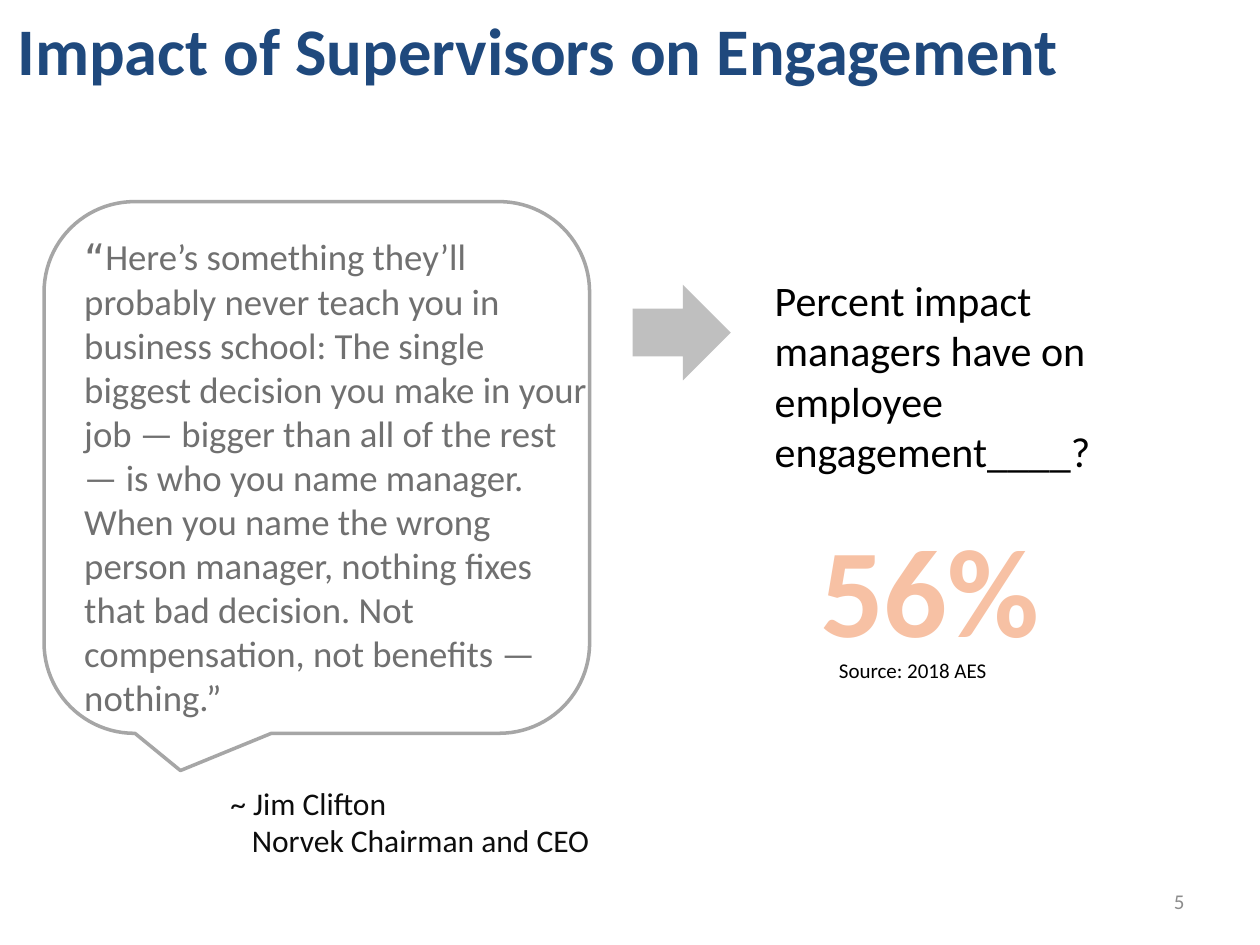
import pptx
import pptx.util
import pptx.dml.color
import pptx.enum.shapes
import pptx.enum.text

Inches = pptx.util.Inches
RGBColor = pptx.dml.color.RGBColor
SHAPE = pptx.enum.shapes.MSO_SHAPE
ALIGN = pptx.enum.text.PP_ALIGN
ANCHOR = pptx.enum.text.MSO_ANCHOR

WHITE = RGBColor(0xFF, 0xFF, 0xFF)
BLACK = RGBColor(0x00, 0x00, 0x00)
NAVY = RGBColor(0x1F, 0x49, 0x7D)
PEACH = RGBColor(0xF7, 0xC1, 0xA4)
QUOTE_GRAY = RGBColor(0x70, 0x70, 0x70)
NUMBER_GRAY = RGBColor(0x8C, 0x8C, 0x8C)
OUTLINE_GRAY = RGBColor(0xA6, 0xA6, 0xA6)
ARROW_GRAY = RGBColor(0xBF, 0xBF, 0xBF)
NEAR_BLACK = RGBColor(0x0D, 0x0D, 0x0D)


def add_run(paragraph, text, size, color=BLACK, bold=False, font="Calibri"):
    run = paragraph.add_run()
    run.text = text
    run.font.size = pptx.util.Pt(size)
    run.font.name = font
    run.font.bold = bold
    run.font.color.rgb = color


def add_text(slide, box, text, align=ALIGN.LEFT, anchor=ANCHOR.TOP,
             wrap=True, **font_format):
    shape = slide.shapes.add_textbox(*map(Inches, box))
    frame = shape.text_frame
    frame.word_wrap = wrap
    frame.vertical_anchor = anchor
    for index, line in enumerate(text.split("\n")):
        paragraph = frame.add_paragraph() if index else frame.paragraphs[0]
        paragraph.alignment = align
        add_run(paragraph, line, **font_format)
    return frame


def add_plain_shape(slide, kind, box, fill, line=None):
    shape = slide.shapes.add_shape(kind, *map(Inches, box))
    shape.shadow.inherit = False
    shape.fill.solid()
    shape.fill.fore_color.rgb = fill
    if line is None:
        shape.line.fill.background()
    else:
        shape.line.color.rgb = line
        shape.line.width = pptx.util.Pt(2)
    return shape


def add_title(slide, box):
    add_text(slide, box, "Impact of Supervisors on Engagement",
             size=38, color=NAVY, bold=True)


def add_quote(slide, box):
    left, top, width, height = box
    bubble = add_plain_shape(slide, SHAPE.ROUNDED_RECTANGULAR_CALLOUT, box,
                             WHITE, OUTLINE_GRAY)
    for index, value in enumerate((-0.25, 0.57, 0.17)):
        bubble.adjustments[index] = value

    attribution = add_text(
        slide, (left + 1.38, top + height + 0.35, 3.68, 1.01),
        "~ Jim Clifton\nNorvek Chairman and CEO", size=18, color=NEAR_BLACK)
    properties = attribution.paragraphs[1]._p.get_or_add_pPr()
    properties.set("marL", str(Inches(0.17)))

    quote = add_text(
        slide, (left + 0.22, top + 0.21, width - 0.14, height - 0.23), "“",
        size=20, color=QUOTE_GRAY, font="DejaVu Sans Mono")
    add_run(
        quote.paragraphs[0],
        "Here’s something they’ll probably never teach you in business school: "
        "The single biggest decision you make in your job — bigger than all of "
        "the rest — is who you name manager. When you name the wrong person "
        "manager, nothing fixes that bad decision. Not compensation, not "
        "benefits — nothing.”",
        size=21, color=QUOTE_GRAY)


def add_question(slide, box):
    left, top, width, height = box
    add_plain_shape(slide, SHAPE.RIGHT_ARROW, (left, top + 0.13, 0.78, 0.76),
                    ARROW_GRAY)
    add_text(slide, (left + 1.03, top, width - 1.03, height),
             "Percent impact managers have on employee engagement____?",
             size=24)


def add_answer(slide, box):
    left, top, width, height = box
    add_text(slide, (left, top, width, height - 0.15), "56%",
             align=ALIGN.CENTER, wrap=False, size=72, color=PEACH, bold=True)
    add_text(slide, (left + 0.16, top + height - 0.3, width - 0.16, 0.3),
             "Source: 2018 AES", size=12)


def add_slide_number(slide, box):
    add_text(slide, box, "5", align=ALIGN.RIGHT, anchor=ANCHOR.MIDDLE,
             size=12, color=NUMBER_GRAY)


def main():
    presentation = pptx.Presentation()
    presentation.slide_width = Inches(10)
    presentation.slide_height = Inches(7.5)
    slide = presentation.slides.add_slide(presentation.slide_layouts[6])
    add_slide_number(slide, (7.17, 6.95, 2.33, 0.4))
    add_quote(slide, (0.35, 1.6, 4.33, 4.22))
    add_question(slide, (5.02, 2.13, 4.62, 1.72))
    add_title(slide, (0.04, 0.02, 9.1, 0.74))
    add_answer(slide, (6.4, 4.01, 1.96, 1.46))
    presentation.save("out.pptx")


if __name__ == "__main__":
    main()
